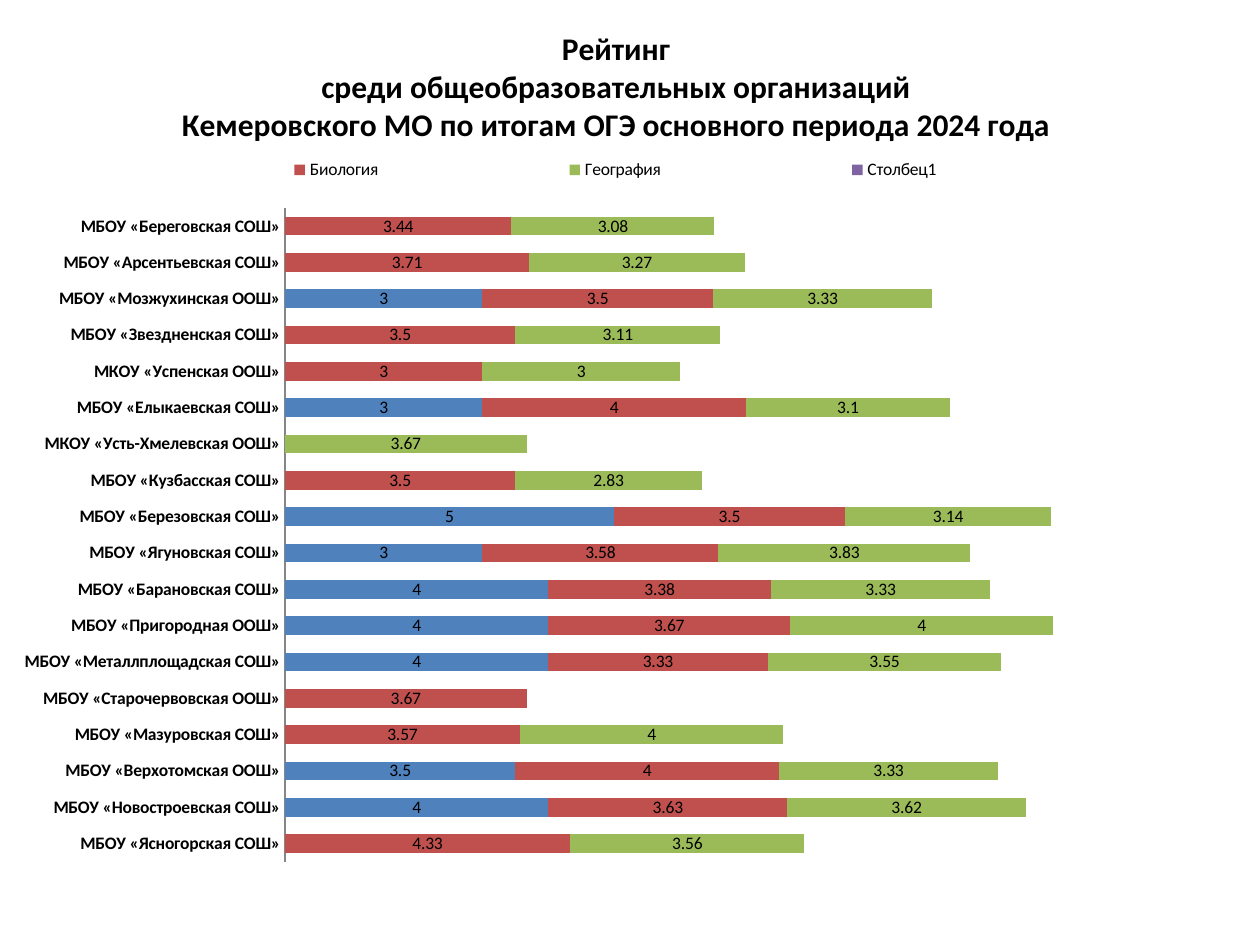
from lxml import etree
from pptx import Presentation
from pptx.chart.data import CategoryChartData
from pptx.dml.color import RGBColor
from pptx.enum.chart import (XL_CHART_TYPE, XL_LABEL_POSITION, XL_LEGEND_POSITION,
                             XL_TICK_LABEL_POSITION, XL_TICK_MARK)
from pptx.oxml import parse_xml
from pptx.oxml.ns import nsdecls, qn
from pptx.util import Pt

BAR_STACKED = XL_CHART_TYPE.BAR_STACKED
LABEL_CENTER = XL_LABEL_POSITION.CENTER
LEGEND_TOP = XL_LEGEND_POSITION.TOP
LABELS_NEXT_TO_AXIS = XL_TICK_LABEL_POSITION.NEXT_TO_AXIS
NO_TICK = XL_TICK_MARK.NONE

# Content: schools from the bottom bar up, with average marks per subject
TITLE = [
    "Рейтинг",
    "среди общеобразовательных организаций",
    "Кемеровского МО по итогам ОГЭ основного периода 2024 года",
]
SUBJECTS = ["Химия", "Биология", "География"]
SPARE_COLUMN = "Столбец1"  # empty series, left out of the legend
SCHOOLS = [
    ("МБОУ «Ясногорская СОШ»", None, 4.33, 3.56),
    ("МБОУ «Новостроевская СОШ»", 4, 3.63, 3.62),
    ("МБОУ «Верхотомская ООШ»", 3.5, 4, 3.33),
    ("МБОУ «Мазуровская СОШ»", None, 3.57, 4),
    ("МБОУ «Старочервовская ООШ»", None, 3.67, None),
    ("МБОУ «Металлплощадская СОШ»", 4, 3.33, 3.55),
    ("МБОУ «Пригородная ООШ»", 4, 3.67, 4),
    ("МБОУ «Барановская СОШ»", 4, 3.38, 3.33),
    ("МБОУ «Ягуновская СОШ»", 3, 3.58, 3.83),
    ("МБОУ «Березовская СОШ»", 5, 3.5, 3.14),
    ("МБОУ «Кузбасская СОШ»", None, 3.5, 2.83),
    ("МКОУ «Усть-Хмелевская ООШ»", None, None, 3.67),
    ("МБОУ «Елыкаевская СОШ»", 3, 4, 3.1),
    ("МКОУ «Успенская ООШ»", None, 3, 3),
    ("МБОУ «Звездненская СОШ»", None, 3.5, 3.11),
    ("МБОУ «Мозжухинская ООШ»", 3, 3.5, 3.33),
    ("МБОУ «Арсентьевская СОШ»", None, 3.71, 3.27),
    ("МБОУ «Береговская СОШ»", None, 3.44, 3.08),
]

THEME = {
    "font": "Calibri", "text": "000000", "axis": "868686",
    "series": ["4F81BD", "C0504D", "9BBB59", "8064A2"],
    "title_size": 18, "text_size": 10,
}

# Geometry in px
PX = 914400 // 126
PAGE = (1260, 945)
CHART = (1232, 879)
TITLE_AT = (178, 24)
LEGEND_AREA = (109, 150, 1013, 40)
PLOT_AREA = (285, 208, 922, 654)
AXIS_MAX = 14


def color(name):
    return RGBColor.from_string(name)


def style_font(font, size, bold=False):
    font.color.rgb = color(THEME["text"])
    values = {"name": THEME["font"], "size": Pt(size), "bold": bold}
    for name, value in values.items():
        setattr(font, name, value)


def place(element, area, before, inner=False):
    """Fix a chart part at an area given in px of the chart."""
    for old in element.findall(qn("c:layout")):
        element.remove(old)
    layout = parse_xml(f"<c:layout {nsdecls('c')}><c:manualLayout/></c:layout>")
    settings = [("layoutTarget", "inner")] if inner else []
    settings += [("xMode", "edge"), ("yMode", "edge")]
    settings += [(key, f"{length / CHART[i % 2]:.4f}")
                 for i, (key, length) in enumerate(zip("xywh", area))]
    for tag, value in settings:
        etree.SubElement(layout[0], qn(f"c:{tag}")).set("val", value)
    element.find(qn(before)).addprevious(layout)


def add_title(chart):
    frame = chart.chart_title.text_frame
    for i, line in enumerate(TITLE):
        para = frame.paragraphs[0] if i == 0 else frame.add_paragraph()
        span = para.add_run()
        span.text = line
        style_font(span.font, THEME["title_size"], bold=True)
    chart.chart_title.include_in_layout = False
    place(chart.chart_title._element, TITLE_AT, "c:overlay")


def add_legend(chart):
    chart.has_legend = True
    legend = chart.legend
    legend.position = LEGEND_TOP
    legend.include_in_layout = False
    style_font(legend.font, THEME["text_size"])
    place(legend._element, LEGEND_AREA, "c:overlay")
    hidden_entry = parse_xml(
        f'<c:legendEntry {nsdecls("c")}><c:idx val="{len(SUBJECTS)}"/>'
        '<c:delete val="1"/></c:legendEntry>')
    legend._element.find(qn("c:legendPos")).addnext(hidden_entry)


def style_axes(chart):
    schools, marks = chart.category_axis, chart.value_axis
    schools.major_tick_mark = schools.minor_tick_mark = NO_TICK
    schools.tick_label_position = LABELS_NEXT_TO_AXIS
    schools.format.line.color.rgb = color(THEME["axis"])
    style_font(schools.tick_labels.font, THEME["text_size"], bold=True)
    marks.minimum_scale, marks.maximum_scale = 0, AXIS_MAX
    marks.has_major_gridlines = False
    marks.visible = False


def style_bars(chart):
    plot = chart.plots[0]
    plot.gap_width, plot.overlap = 95, 100
    plot.vary_by_categories = False
    for series, fill in zip(plot.series, THEME["series"]):
        series.format.fill.solid()
        series.format.fill.fore_color.rgb = color(fill)
        labels = series.data_labels
        labels.show_value = True
        labels.position = LABEL_CENTER
        style_font(labels.font, THEME["text_size"])


def main():
    deck = Presentation()
    deck.slide_width, deck.slide_height = (side * PX for side in PAGE)
    page = deck.slides.add_slide(deck.slide_layouts[6])

    # Chart data
    data = CategoryChartData()
    names, *marks = zip(*SCHOOLS)
    data.categories = names
    for subject, values in zip(SUBJECTS, marks):
        data.add_series(subject, values)
    data.add_series(SPARE_COLUMN, [None] * len(SCHOOLS))

    # Chart and its parts
    width, height = (side * PX for side in CHART)
    chart = page.shapes.add_chart(BAR_STACKED, 0, 0, width, height, data).chart
    style_font(chart.font, THEME["text_size"])
    add_title(chart)
    add_legend(chart)
    style_axes(chart)
    style_bars(chart)
    plot_area = chart.plots[0]._element.getparent()
    place(plot_area, PLOT_AREA, "c:barChart", inner=True)

    deck.save("out.pptx")


if __name__ == "__main__":
    main()
